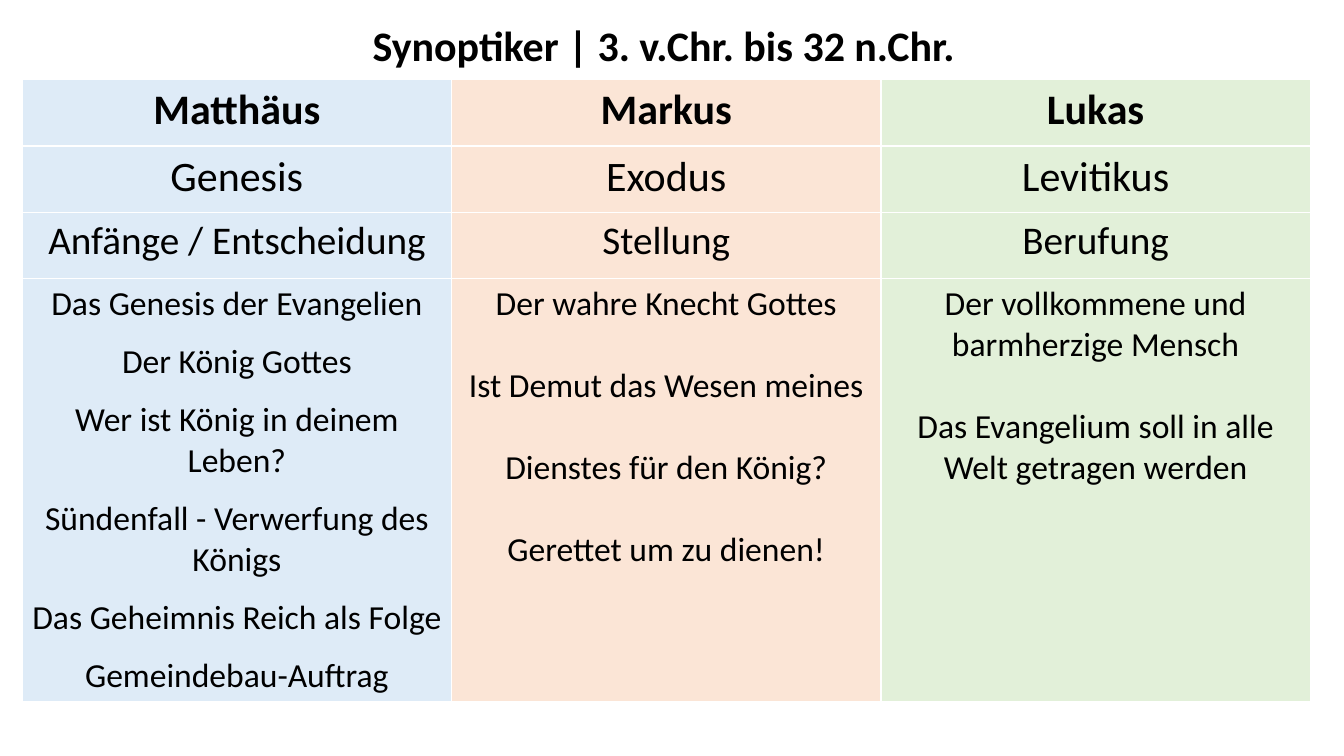
from dataclasses import dataclass
from pptx import Presentation
from pptx.dml.color import RGBColor
from pptx.enum import text
from pptx.util import Cm, Pt

# Content
TITLE = "Synoptiker | 3. v.Chr. bis 32 n.Chr."
# Each gospel: heading, counterpart, theme, statements
GOSPELS = [
    ("Matthäus", "Genesis", "Anfänge / Entscheidung", [
        "Das Genesis der Evangelien",
        "Der König Gottes",
        "Wer ist König in deinem Leben?",
        "Sündenfall - Verwerfung des Königs",
        "Das Geheimnis Reich als Folge",
        "Gemeindebau-Auftrag",
    ]),
    ("Markus", "Exodus", "Stellung", [
        "Der wahre Knecht Gottes",
        "Ist Demut das Wesen meines",
        "Dienstes für den König?",
        "Gerettet um zu dienen!",
    ]),
    ("Lukas", "Levitikus", "Berufung", [
        "Der vollkommene und barmherzige Mensch",
        "Das Evangelium soll in alle Welt getragen werden",
    ]),
]


@dataclass(frozen=True)
class Theme:
    font: str = "Calibri"
    ink: str = "000000"
    fills: tuple = ("DEEBF7", "FBE5D6", "E2F0D9")
    title_size: int = 30
    row_sizes: tuple = (30, 30, 28, 24)
    statement_gaps: tuple = (12.2, 29.3, 29.3)


THEME = Theme()
ROW_HEIGHTS = (1.67, 1.67, 1.67, 10.65)
COLUMN_WIDTH = 10.82


def style(para, size, bold=False):
    para.font.name = THEME.font
    para.font.size = Pt(size)
    para.font.bold = bold
    para.font.color.rgb = RGBColor.from_string(THEME.ink)


def fill_cell(cell, lines, fill, size, bold, gap):
    cell.fill.solid()
    cell.fill.fore_color.rgb = RGBColor.from_string(fill)
    cell.text_frame.text = "\n".join(lines)
    for index, para in enumerate(cell.text_frame.paragraphs):
        style(para, size, bold)
        para.alignment = text.PP_ALIGN.CENTER
        if index:
            para.space_before = Pt(gap)


deck = Presentation()
deck.slide_width, deck.slide_height = Cm(33.87), Cm(19.05)
page = deck.slides.add_slide(deck.slide_layouts[6])

# Gospel table
table = page.shapes.add_table(
    len(ROW_HEIGHTS), len(GOSPELS), Cm(0.56), Cm(2.01),
    Cm(COLUMN_WIDTH * len(GOSPELS)), Cm(sum(ROW_HEIGHTS))).table
table.horz_banding = False
for row, height in zip(table.rows, ROW_HEIGHTS):
    row.height = Cm(height)
for column, gospel in enumerate(GOSPELS):
    table.columns[column].width = Cm(COLUMN_WIDTH)
    for row, entry in enumerate(gospel):
        lines = [entry] if isinstance(entry, str) else entry
        fill_cell(table.cell(row, column), lines, THEME.fills[column],
                  THEME.row_sizes[row], row == 0, THEME.statement_gaps[column])

# Title
box = page.shapes.add_textbox(Cm(9.14), Cm(0.36), Cm(15.34), Cm(1.54))
box.text_frame.word_wrap = False
box.text_frame.auto_size = text.MSO_AUTO_SIZE.SHAPE_TO_FIT_TEXT
box.text_frame.text = TITLE
style(box.text_frame.paragraphs[0], THEME.title_size, bold=True)

deck.save("out.pptx")
